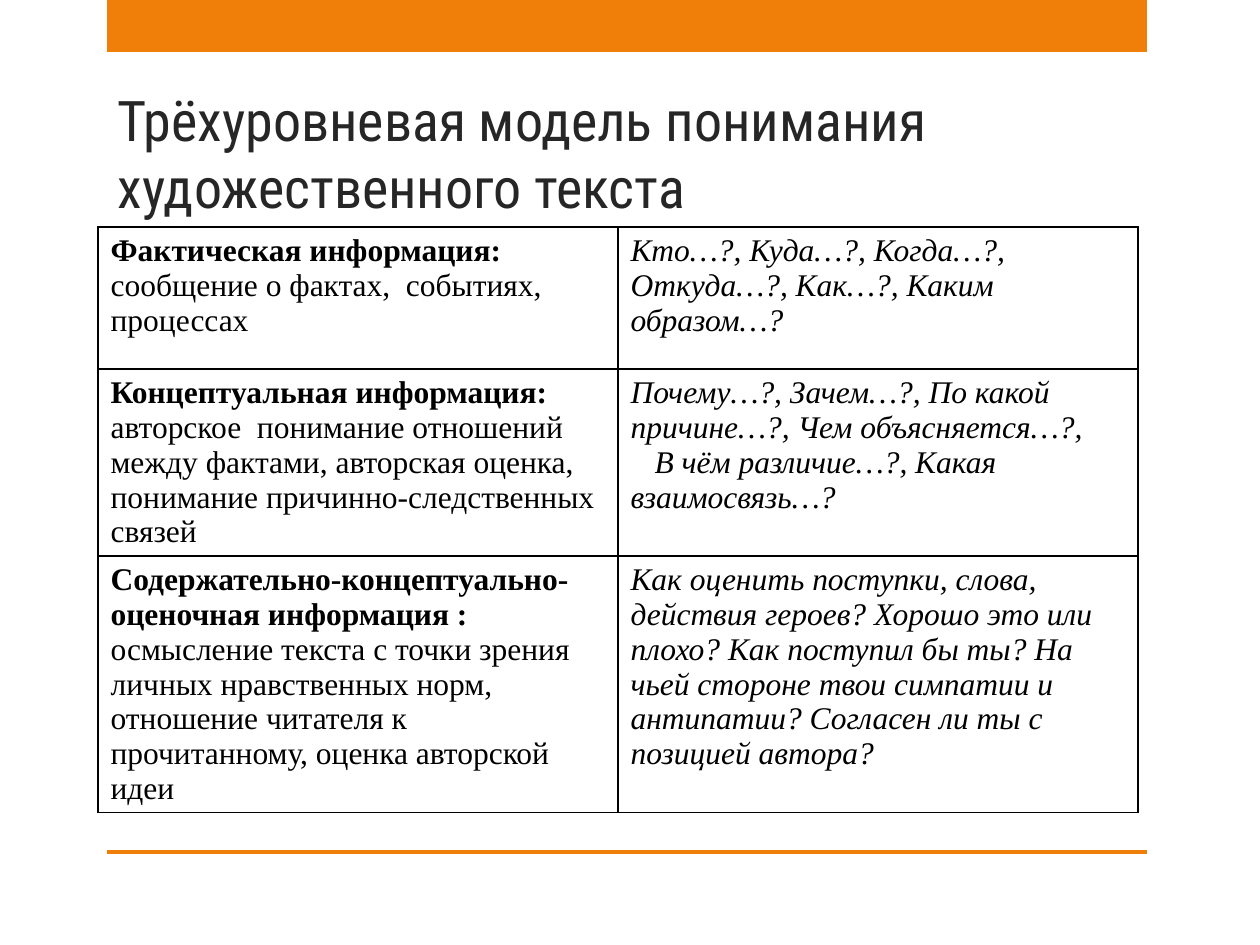
import lxml.etree
import pptx
import pptx.dml.color
import pptx.enum.shapes
import pptx.enum.text
import pptx.oxml.ns
import pptx.util

PX_PER_INCH = 126
ORANGE, BLACK, DARK = "F07F09", "000000", "262626"

LEVELS = [
    ("Фактическая информация:",
     "сообщение о фактах,  событиях, процессах",
     ["Кто…?, Куда…?, Когда…?, Откуда…?, Как…?, Каким образом…?"]),
    ("Концептуальная информация:",
     "авторское  понимание отношений между фактами, авторская оценка, "
     "понимание причинно-следственных связей",
     ["Почему…?, Зачем…?, По какой причине…?, Чем объясняется…?,",
      "В чём различие…?, Какая взаимосвязь…?"]),
    ("Содержательно-концептуально-оценочная информация :",
     "осмысление текста с точки зрения личных нравственных норм, "
     "отношение читателя к прочитанному, оценка авторской идеи",
     ["Как оценить поступки, слова, действия героев? Хорошо это или плохо? "
      "Как поступил бы ты? На чьей стороне твои симпатии и антипатии? "
      "Согласен ли ты с позицией автора?"]),
]


def px(n):
    return pptx.util.Emu(round(n * 914400 / PX_PER_INCH))


def color(value):
    return pptx.dml.color.RGBColor.from_string(value)


class SlideBuilder:
    title_font = {"name": "Roboto Condensed", "size": pptx.util.Pt(32), "bold": False}
    body_font = {"name": "Times New Roman", "size": pptx.util.Pt(18)}

    def __init__(self, slide):
        self.s = slide

    def add_run(self, p, text, rgb, **fmt):
        r = p.add_run()
        r.text = text
        for key, value in fmt.items():
            setattr(r.font, key, value)
        r.font.color.rgb = color(rgb)

    def bar(self, x, y, w, h):
        sp = self.s.shapes.add_shape(
            pptx.enum.shapes.MSO_SHAPE.RECTANGLE, px(x), px(y), px(w), px(h))
        sp.shadow.inherit = False
        sp.fill.solid()
        sp.fill.fore_color.rgb = color(ORANGE)
        sp.line.fill.background()

    def title(self, text, x, y, w, h):
        sp = self.s.shapes.title
        sp.left, sp.top, sp.width, sp.height = map(px, (x, y, w, h))
        tf = sp.text_frame
        frame = {"word_wrap": True,
                 "auto_size": pptx.enum.text.MSO_AUTO_SIZE.NONE,
                 "vertical_anchor": pptx.enum.text.MSO_ANCHOR.BOTTOM}
        for key, value in frame.items():
            setattr(tf, key, value)
        p = tf.paragraphs[0]
        p.alignment = pptx.enum.text.PP_ALIGN.LEFT
        self.add_run(p, text, DARK, **self.title_font)

    def borders(self, cell):
        """Draw a 1 pt line on all four sides of a cell."""
        tc_pr = cell._tc.get_or_add_tcPr()
        qn = pptx.oxml.ns.qn
        for side in "LRTB":
            ln = lxml.etree.SubElement(tc_pr, qn(f"a:ln{side}"), w=str(pptx.util.Pt(1)))
            fill = lxml.etree.SubElement(ln, qn("a:solidFill"))
            lxml.etree.SubElement(fill, qn("a:srgbClr"), val=BLACK)

    def cell(self, cell, paragraphs, indent=0):
        """Fill a cell from (text, format) pairs; indent is the first line of later ones."""
        self.borders(cell)
        cell.fill.background()
        tf = cell.text_frame
        for i, (text, fmt) in enumerate(paragraphs):
            p = tf.add_paragraph() if i else tf.paragraphs[0]
            if i and indent:
                p._p.get_or_add_pPr().set("indent", str(px(indent)))
            self.add_run(p, text, BLACK, **self.body_font, **fmt)

    def table(self, levels, x, y, w, heights):
        table = self.s.shapes.add_table(
            len(levels), 2, px(x), px(y), px(w), px(sum(heights))).table
        table.first_row = table.horz_banding = False
        for row, height, (name, meaning, questions) in zip(table.rows, heights, levels):
            row.height = px(height)
            info, ask = row.cells
            self.cell(info, [(name, {"bold": True}), (meaning, {"bold": False})])
            self.cell(ask, [(q, {"bold": False, "italic": True}) for q in questions],
                      indent=24)


def main():
    prs = pptx.Presentation()
    prs.slide_width, prs.slide_height = px(1260), px(945)
    slide = SlideBuilder(prs.slides.add_slide(prs.slide_layouts[5]))
    slide.bar(107, 0, 1040, 52)
    slide.bar(107, 850, 1040, 4)
    slide.title("Трёхуровневая модель понимания художественного текста",
                105, 76, 935, 150)
    slide.table(LEVELS, 98, 227, 1040, [142, 187, 256])
    prs.save("out.pptx")


if __name__ == "__main__":
    main()
